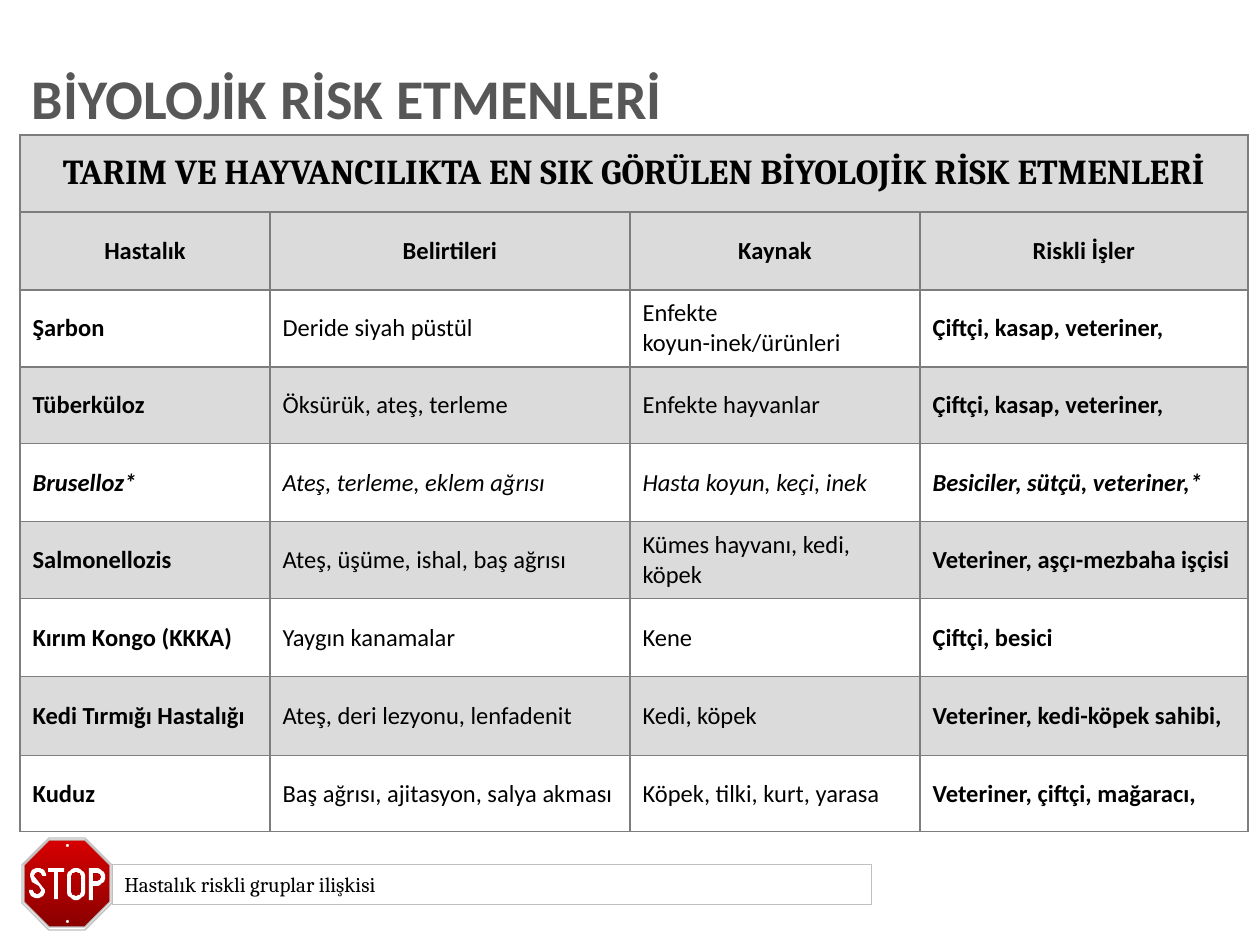
from math import cos, radians, sin

from lxml.etree import SubElement
from pptx import Presentation
from pptx.dml.color import RGBColor
from pptx.enum.shapes import MSO_SHAPE as SHAPE
from pptx.enum.text import MSO_ANCHOR as ANCHOR, PP_ALIGN as ALIGN
from pptx.oxml.ns import qn
from pptx.util import Emu, Pt

PX = 914400 / 126
COLORS = {
    "heading": "575757", "text": "000000", "white": "FFFFFF",
    "band": "DBDBDB", "grid": "7D7D7D", "rim": "C0C0C0", "caption_line": "BFBFBF",
    "sign_top": "D60000", "sign_bottom": "8A0000", "bolt": "E4E4E4",
}
TABLE_TITLE = "TARIM VE HAYVANCILIKTA EN SIK GÖRÜLEN BİYOLOJİK RİSK ETMENLERİ"
COLUMN_HEADS = ("Hastalık", "Belirtileri", "Kaynak", "Riskli İşler")
DISEASES = [
    ("Şarbon", "Deride siyah püstül", "Enfekte koyun-inek/ürünleri",
     "Çiftçi, kasap, veteriner,"),
    ("Tüberküloz", "Öksürük, ateş, terleme", "Enfekte hayvanlar",
     "Çiftçi, kasap, veteriner,"),
    ("Bruselloz*", "Ateş, terleme, eklem ağrısı", "Hasta koyun, keçi, inek",
     "Besiciler, sütçü, veteriner,*"),
    ("Salmonellozis", "Ateş, üşüme, ishal, baş ağrısı", "Kümes hayvanı, kedi, köpek",
     "Veteriner, aşçı-mezbaha işçisi"),
    ("Kırım Kongo (KKKA)", "Yaygın kanamalar", "Kene", "Çiftçi, besici"),
    ("Kedi Tırmığı Hastalığı", "Ateş, deri lezyonu, lenfadenit", "Kedi, köpek",
     "Veteriner, kedi-köpek sahibi,"),
    ("Kuduz", "Baş ağrısı, ajitasyon, salya akması", "Köpek, tilki, kurt, yarasa",
     "Veteriner, çiftçi, mağaracı,"),
]
COLUMN_WIDTHS = (250, 360, 290, 328)
ROW_HEIGHTS = (77, 78, 77, 77, 78, 77, 78, 79, 76)


def px(length):
    return Emu(round(length * PX))


def emu_box(box):
    return [px(length) for length in box]


def color(key):
    return RGBColor.from_string(COLORS[key])


def write(paragraph, text, size=14, font="Calibri", ink="text",
          bold=False, italic=False, align=ALIGN.LEFT):
    paragraph.alignment = align
    run = paragraph.add_run()
    run.text = text
    run.font.size, run.font.name = Pt(size), font
    run.font.bold, run.font.italic = bold, italic
    run.font.color.rgb = color(ink)


def paint(shape, fill=None, line=None, width=0.75):
    shape.shadow.inherit = False
    if fill:
        shape.fill.solid()
        shape.fill.fore_color.rgb = color(fill)
    else:
        shape.fill.background()
    if line:
        shape.line.color.rgb = color(line)
        shape.line.width = Pt(width)
    else:
        shape.line.fill.background()


def place_title(slide, box):
    title = slide.shapes.title
    title.left, title.top, title.width, title.height = emu_box(box)
    frame = title.text_frame
    frame.word_wrap = True
    frame.margin_left = frame.margin_right = 0
    frame.vertical_anchor = ANCHOR.MIDDLE
    heading = frame.paragraphs[0]
    heading.line_spacing = 0.9
    write(heading, "BİYOLOJİK RİSK ETMENLERİ", size=32, ink="heading", bold=True)


def border(cell):
    properties = cell._tc.get_or_add_tcPr()
    for position, side in enumerate(("a:lnL", "a:lnR", "a:lnT", "a:lnB")):
        line = SubElement(properties, qn(side), w=str(Pt(0.75)))
        fill = SubElement(line, qn("a:solidFill"))
        SubElement(fill, qn("a:srgbClr"), val=COLORS["grid"])
        properties.insert(position, line)


def fill_cell(cell, text, fill, **text_format):
    cell.fill.solid()
    cell.fill.fore_color.rgb = color(fill)
    cell.vertical_anchor = ANCHOR.MIDDLE
    write(cell.text_frame.paragraphs[0], text, **text_format)


def place_diseases(slide, left, top):
    box = (left, top, sum(COLUMN_WIDTHS), sum(ROW_HEIGHTS))
    table = slide.shapes.add_table(
        len(ROW_HEIGHTS), len(COLUMN_WIDTHS), *emu_box(box)).table
    table.first_row = table.horz_banding = False
    for column, width in zip(table.columns, COLUMN_WIDTHS):
        column.width = px(width)
    for row, height in zip(table.rows, ROW_HEIGHTS):
        row.height = px(height)

    # Heading rows
    table.cell(0, 0).merge(table.cell(0, len(COLUMN_WIDTHS) - 1))
    fill_cell(table.cell(0, 0), TABLE_TITLE, "band", size=20, font="Cambria",
              bold=True, align=ALIGN.CENTER)
    for c, head in enumerate(COLUMN_HEADS):
        fill_cell(table.cell(1, c), head, "band", bold=True, align=ALIGN.CENTER)

    # Disease rows: outer columns bold, starred disease italic
    for r, disease in enumerate(DISEASES):
        for c, text in enumerate(disease):
            fill_cell(table.cell(r + 2, c), text, "band" if r % 2 else "white",
                      bold=c in (0, 3), italic=disease[0].endswith("*"))
    for cell in table.iter_cells():
        border(cell)


def arc(cx, cy, rx, ry, start, end, steps=12):
    angles = [radians(start + (end - start) * i / steps) for i in range(steps + 1)]
    return [(cx + rx * cos(a), cy + ry * sin(a)) for a in angles]


def octagon(left, top, width, height, cut):
    right, bottom = left + width, top + height
    return [(left + cut, bottom), (left, bottom - cut), (left, top + cut),
            (left + cut, top), (right - cut, top), (right, top + cut),
            (right, bottom - cut), (right - cut, bottom)]


def outline(group, left, top, *contours):
    placed = [[(left + x, top + y) for x, y in contour] for contour in contours]
    builder = group.shapes.build_freeform(*placed[0][0], scale=PX)
    builder.add_line_segments(placed[0][1:], close=True)
    for contour in placed[1:]:
        builder.move_to(*contour[0])
        builder.add_line_segments(contour[1:], close=True)
    return builder.convert_to_shape()


def place_stop_sign(group, left, top):
    # Octagon with a white rim
    paint(outline(group, left, top, octagon(0, 0, 90, 92, 27)), "white", "rim")
    face = outline(group, left, top, octagon(2, 2, 86, 87, 25))
    paint(face, "sign_top", "rim")
    face.fill.gradient()
    face.fill.gradient_angle = 270
    for stop, key, position in zip(face.fill.gradient_stops,
                                   ("sign_top", "sign_bottom"), (0, 1)):
        stop.color.rgb = color(key)
        stop.position = position

    # Letters S, T, O, P
    letters = [
        [arc(16, 38, 4, 4, 360, 180) + arc(15, 52, 8, 8, 0, 180)
         + arc(15, 52, 4, 4, 180, 0) + [(17, 48), (10, 44)]
         + arc(16, 38, 8, 8, 180, 360)],
        [[(26, 30), (42, 30), (42, 34), (36, 34), (36, 61), (32, 61),
          (32, 34), (26, 34)]],
        [arc(54, 39, 9, 9, 180, 360) + arc(54, 53, 9, 9, 0, 180),
         arc(54, 39, 5, 5, 180, 360) + arc(54, 53, 5, 5, 0, 180)],
        [[(67, 30)] + arc(74, 39, 9, 9, -90, 90) + [(71, 48), (71, 62), (67, 62)],
         [(71, 35)] + arc(75, 39, 4, 4, -90, 90) + [(71, 43)]],
    ]
    for contours in letters:
        paint(outline(group, left, top, *contours), "white")

    # Bolts
    for bolt_top in (6, 82):
        for inset, size, fill in ((0, 3, "bolt"), (1, 1, "white")):
            box = (left + 44 + inset, top + bolt_top + inset, size, size)
            paint(group.shapes.add_shape(SHAPE.OVAL, *emu_box(box)), fill)


def place_caption(group, box):
    caption = group.shapes.add_shape(SHAPE.RECTANGLE, *emu_box(box))
    paint(caption, line="caption_line", width=0.25)
    frame = caption.text_frame
    frame.word_wrap = True
    frame.vertical_anchor = ANCHOR.MIDDLE
    write(frame.paragraphs[0], "Hastalık riskli gruplar ilişkisi", size=12, font="Cambria")


def main():
    deck = Presentation()
    deck.slide_width, deck.slide_height = px(1260), px(945)
    slide = deck.slides.add_slide(deck.slide_layouts[5])
    place_title(slide, (32, 57, 1215, 89))
    place_diseases(slide, 20, 135)
    note = slide.shapes.add_group_shape()
    place_stop_sign(note, 22, 838)
    place_caption(note, (112, 864, 759, 40))
    deck.save("out.pptx")


if __name__ == "__main__":
    main()
